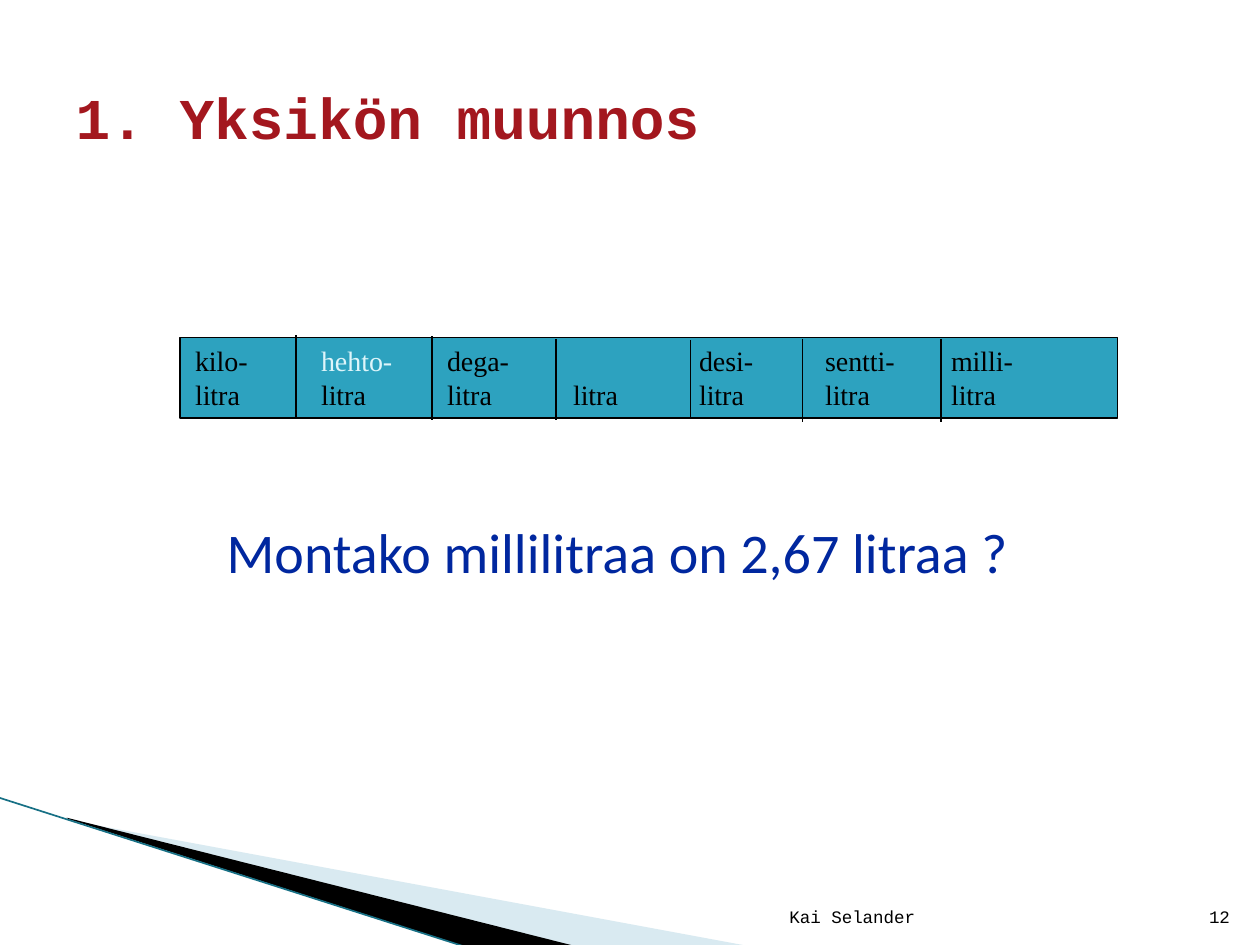
from typing import NamedTuple, Optional

from lxml.etree import SubElement
from pptx import Presentation
from pptx.dml.color import RGBColor
from pptx.enum.shapes import MSO_CONNECTOR as CONNECTOR, MSO_SHAPE as SHAPE
from pptx.enum.text import MSO_ANCHOR as ANCHOR, PP_ALIGN as ALIGN
from pptx.oxml.ns import qn
from pptx.util import Inches, Pt

BLACK = RGBColor(0x00, 0x00, 0x00)
TEAL = RGBColor(0x2D, 0xA2, 0xBF)
EDGE_TEAL = RGBColor(0x17, 0x70, 0x85)
PALE_BLUE = RGBColor(0xA0, 0xCB, 0xDC)
PALE_TEXT = RGBColor(0xDE, 0xF5, 0xFA)
BLUE = RGBColor(0x00, 0x27, 0x9F)
RED = RGBColor(0xA3, 0x17, 0x1E)

UNIT_COUNT = 7


class Wedge(NamedTuple):
    points: list[tuple[float, float]]
    color: RGBColor
    opacity: Optional[int] = None


class Line(NamedTuple):
    start: tuple[float, float]
    end: tuple[float, float]
    color: RGBColor = BLACK
    width: float = 1


class Run(NamedTuple):
    text: str
    color: RGBColor = BLACK


class Label(NamedTuple):
    box: tuple[float, float, float, float]
    paragraphs: list[list[Run]]
    font: dict
    wrap: bool = False
    anchor: ANCHOR = ANCHOR.TOP
    align: ALIGN = ALIGN.LEFT
    tabs: tuple[float, ...] = ()


SMALL = {"name": "Courier New", "size": Pt(10)}
FOOTER = {"font": SMALL, "wrap": True, "anchor": ANCHOR.BOTTOM, "align": ALIGN.RIGHT}

WEDGES = [
    Wedge([(0.55, 6.51), (5.95, 7.51), (4.56, 7.51), (0.55, 6.5)], PALE_BLUE, 40),
    Wedge([(0.53, 6.49), (4.57, 7.51), (3.72, 7.52), (0.54, 6.5)], BLACK),
]
EDGE = Line((-0.01, 6.33), (3.71, 7.52), EDGE_TEAL, 0.95)
DIVIDERS = [
    Line((x, top), (x, bottom))
    for x, top, bottom in [
        (2.35, 2.66, 3.31), (3.43, 2.67, 3.33), (4.41, 2.69, 3.33),
        (5.48, 2.7, 3.32), (6.37, 2.69, 3.35), (7.47, 2.69, 3.35),
    ]
]
UNITS = Label(
    (1.45, 2.68, 6.7, 0.63),
    [
        [Run("kilo-\t"), Run("hehto-", PALE_TEXT),
         Run("\tdega-\t\tdesi-\tsentti-\tmilli-")],
        [Run("\t".join(["litra"] * UNIT_COUNT))],
    ],
    {"name": "Times New Roman", "size": Pt(16)},
    tabs=tuple(range(1, UNIT_COUNT)),
)
QUESTION = Label(
    (1.7, 4.06, 6.62, 0.64),
    [[Run("Montako millilitraa on 2,67 litraa ?", BLUE)]],
    {"name": "Calibri", "size": Pt(32)},
)
AUTHOR = Label((4.79, 7.01, 2.57, 0.4), [[Run("Kai Selander")]], **FOOTER)
PAGE = Label((9.46, 7.01, 0.4, 0.4), [[Run("12")]], **FOOTER)


def set_format(target, values: dict) -> None:
    for name, value in values.items():
        setattr(target, name, value)


def draw_wedge(slide, wedge: Wedge) -> None:
    first, *rest = [(Inches(x), Inches(y)) for x, y in wedge.points]
    builder = slide.shapes.build_freeform(*first)
    builder.add_line_segments(rest, close=True)
    sp = builder.convert_to_shape()
    sp.shadow.inherit = False
    sp.fill.solid()
    sp.fill.fore_color.rgb = wedge.color
    sp.line.fill.background()
    if wedge.opacity is not None:
        color = sp._element.spPr.find(qn("a:solidFill"))[0]
        SubElement(color, qn("a:alpha"), val=str(wedge.opacity * 1000))


def draw_line(slide, line: Line) -> None:
    ends = [Inches(v) for v in line.start + line.end]
    cxn = slide.shapes.add_connector(CONNECTOR.STRAIGHT, *ends)
    cxn.line.color.rgb = line.color
    cxn.line.width = Pt(line.width)
    SubElement(cxn._element.spPr, qn("a:effectLst"))


def add_tabs(p, stops: tuple[float, ...]) -> None:
    tab_list = SubElement(p._p.get_or_add_pPr(), qn("a:tabLst"))
    for stop in stops:
        SubElement(tab_list, qn("a:tab"), pos=str(Inches(stop)), algn="l")


def draw_label(slide, label: Label) -> None:
    tf = slide.shapes.add_textbox(*map(Inches, label.box)).text_frame
    set_format(tf, {"word_wrap": label.wrap, "vertical_anchor": label.anchor})
    for i, runs in enumerate(label.paragraphs):
        p = tf.add_paragraph() if i else tf.paragraphs[0]
        if label.tabs:
            add_tabs(p, label.tabs)
        p.alignment = label.align
        for run in runs:
            r = p.add_run()
            r.text = run.text
            set_format(r.font, label.font)
            r.font.color.rgb = run.color


def draw_title(slide, text: str) -> None:
    title = slide.shapes.title
    box = zip(("left", "top", "width", "height"), map(Inches, (0.5, 0.3, 9, 1.25)))
    set_format(title, dict(box))
    title.text_frame.vertical_anchor = ANCHOR.MIDDLE
    p = title.text_frame.paragraphs[0]
    p.alignment = ALIGN.LEFT
    r = p.add_run()
    r.text = text
    set_format(r.font, {"name": "Courier New", "size": Pt(33), "bold": True})
    r.font.color.rgb = RED


def draw_band(slide) -> None:
    sp = slide.shapes.add_shape(SHAPE.RECTANGLE, *map(Inches, (1.43, 2.68, 7.44, 0.64)))
    sp.shadow.inherit = False
    sp.fill.solid()
    sp.fill.fore_color.rgb = TEAL
    sp.line.color.rgb = BLACK
    sp.line.width = Pt(1)


def main() -> None:
    prs = Presentation()
    prs.slide_width, prs.slide_height = Inches(10), Inches(7.5)
    slide = prs.slides.add_slide(prs.slide_layouts.get_by_name("Title Only"))
    for wedge in WEDGES:
        draw_wedge(slide, wedge)
    draw_line(slide, EDGE)
    draw_band(slide)
    draw_label(slide, UNITS)
    for divider in DIVIDERS:
        draw_line(slide, divider)
    draw_title(slide, "1. Yksikön muunnos")
    for label in (QUESTION, AUTHOR, PAGE):
        draw_label(slide, label)
    prs.save("out.pptx")


if __name__ == "__main__":
    main()
